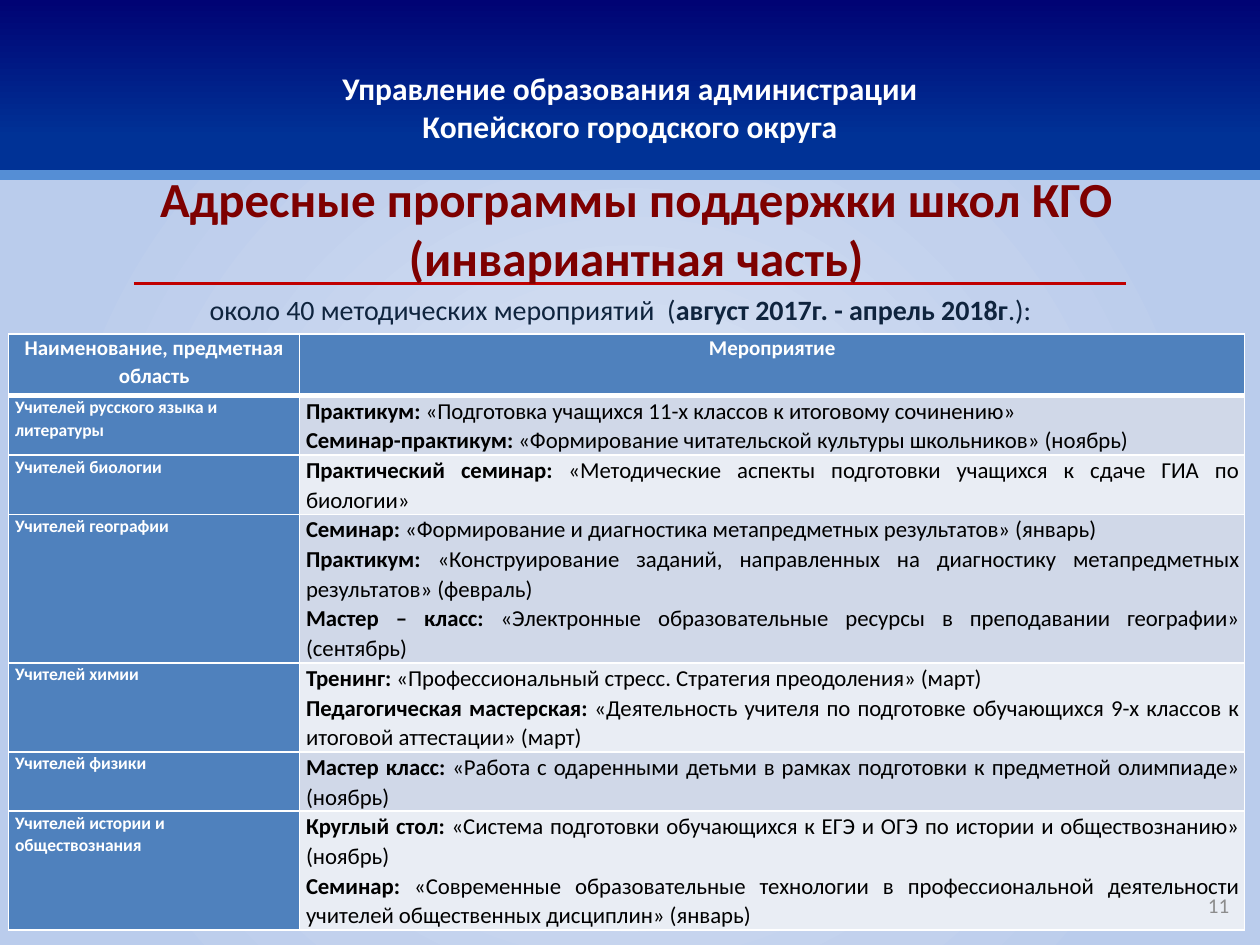
"""Build a slide listing the support programmes for schools by subject area."""
import pptx
import pptx.chart.data
import pptx.dml.color
import pptx.enum.shapes
import pptx.enum.text
import pptx.oxml
import pptx.oxml.ns
import pptx.util

Pt = pptx.util.Pt
ALIGN = pptx.enum.text.PP_ALIGN
ANCHOR = pptx.enum.text.MSO_ANCHOR
RECTANGLE = pptx.enum.shapes.MSO_SHAPE.RECTANGLE
STRAIGHT = pptx.enum.shapes.MSO_CONNECTOR.STRAIGHT
NAMESPACE = pptx.oxml.ns.nsdecls("a")

COLORS = {
    "white": "FFFFFF", "black": "000000", "title": "7E0000", "subtitle": "0F243E",
    "number": "8C8C8C", "edge": "558ED5", "rule": "C00000", "label": "4F81BD",
    "odd": "D0D8E8", "even": "E9EDF4",
}
PANELS = [
    ((0, 0, 720, 100), [(0, "000374"), (79, "003296")], '<a:lin ang="5400000" scaled="0"/>'),
    ((0, 100, 720, 440), [(0, "E1E8F5"), (62, "C2D1ED"), (83, "BACCEC")],
     '<a:path path="circle"><a:fillToRect l="50000" t="50000" r="50000" b="50000"/></a:path>'),
]
RULES = [((0, 100, 720, 100), "edge", 6), ((76.5, 162, 643.5, 162), "rule", 2.25)]
OFFICE = [("Управление образования администрации", True), ("\v", True),
          ("Копейского городского округа", True)]
TITLE = [("Адресные программы поддержки школ КГО (инвариантная часть)", True)]
SUBTITLE = [("около 40 методических мероприятий  (", False),
            ("август 2017г. - апрель 2018г", True), (".):", False)]
PAGE_NUMBER = [("11", False)]
HEADINGS = ["Наименование, предметная область", "Мероприятие"]
COLUMN_WIDTHS = [166.3, 540]
HEADING_HEIGHT = 35.3
PROGRAMMES = [
    ("Учителей русского языка и литературы", 33.5, [
        ("Практикум:", "«Подготовка учащихся 11-х классов к итоговому сочинению»"),
        ("Семинар-практикум:", "«Формирование читательской культуры школьников» (ноябрь)")]),
    ("Учителей биологии", 33.5, [
        ("Практический семинар:",
         "«Методические аспекты подготовки учащихся к сдаче ГИА по биологии»")]),
    ("Учителей географии", 84.5, [
        ("Семинар:", "«Формирование и диагностика метапредметных результатов» (январь)"),
        ("Практикум:", "«Конструирование заданий, направленных на диагностику "
                       "метапредметных результатов» (февраль)"),
        ("Мастер – класс:",
         "«Электронные образовательные ресурсы в преподавании географии» (сентябрь)")]),
    ("Учителей химии", 50.7, [
        ("Тренинг:", "«Профессиональный стресс. Стратегия преодоления» (март)"),
        ("Педагогическая мастерская:", "«Деятельность учителя по подготовке "
                                       "обучающихся 9-х классов к итоговой аттестации» (март)")]),
    ("Учителей физики", 33.5, [
        ("Мастер класс:",
         "«Работа с одаренными детьми в рамках подготовки к предметной олимпиаде» (ноябрь)")]),
    ("Учителей истории и обществознания", 67.5, [
        ("Круглый стол:", "«Система подготовки обучающихся к ЕГЭ и ОГЭ по истории "
                          "и обществознанию» (ноябрь)"),
        ("Семинар:", "«Современные образовательные технологии в профессиональной "
                     "деятельности учителей общественных дисциплин» (январь)")]),
]


def rgb(name):
    return pptx.dml.color.RGBColor.from_string(COLORS[name])


def apply(target, values):
    for name, value in values.items():
        setattr(target, name, value)


def write(paragraph, parts, size, color, alignment, spacing=1.0):
    apply(paragraph, {"alignment": alignment, "line_spacing": spacing, "space_before": Pt(0)})
    for text, bold in parts:
        if text == "\v":
            paragraph.add_line_break()
            continue
        run = paragraph.add_run()
        run.text = text
        apply(run.font, {"name": "Calibri", "size": Pt(size), "bold": bold})
        run.font.color.rgb = rgb(color)


def add_panel(slide, box, stops, direction):
    panel = slide.shapes.add_shape(RECTANGLE, *map(Pt, box))
    panel.shadow.inherit = False
    panel.line.fill.background()
    marks = "".join(f'<a:gs pos="{position * 1000}"><a:srgbClr val="{color}"/></a:gs>'
                    for position, color in stops)
    gradient = pptx.oxml.parse_xml(
        f'<a:gradFill {NAMESPACE} rotWithShape="1"><a:gsLst>{marks}</a:gsLst>{direction}</a:gradFill>')
    panel._element.spPr.find(pptx.oxml.ns.qn("a:prstGeom")).addnext(gradient)
    return panel


def add_rule(slide, ends, color, width):
    rule = slide.shapes.add_connector(STRAIGHT, *map(Pt, ends))
    rule.line.color.rgb = rgb(color)
    rule.line.width = Pt(width)
    rule._element.spPr.append(pptx.oxml.parse_xml(f"<a:effectLst {NAMESPACE}/>"))


def set_frame(shape, box, anchor):
    apply(shape, dict(zip(("left", "top", "width", "height"), map(Pt, box))))
    apply(shape.text_frame, {"word_wrap": True, "vertical_anchor": anchor,
                             "auto_size": pptx.enum.text.MSO_AUTO_SIZE.NONE})
    return shape.text_frame.paragraphs[0]


def add_text(slide, box, anchor):
    return set_frame(slide.shapes.add_textbox(0, 0, 0, 0), box, anchor)


def fill_cell(cell, paragraphs, size, color, alignment, fill, top=1, bottom=1):
    apply(cell, {"margin_left": Pt(3.6), "margin_right": Pt(3.6),
                 "margin_top": 0, "margin_bottom": 0, "vertical_anchor": ANCHOR.TOP})
    properties = cell._tc.get_or_add_tcPr()
    for side, width in (("L", 1), ("R", 1), ("T", top), ("B", bottom)):
        properties.append(pptx.oxml.parse_xml(
            f'<a:ln{side} {NAMESPACE} w="{Pt(width)}"><a:solidFill>'
            f'<a:srgbClr val="{COLORS["white"]}"/></a:solidFill></a:ln{side}>'))
    cell.fill.solid()
    cell.fill.fore_color.rgb = rgb(fill)
    frame = cell.text_frame
    for index, parts in enumerate(paragraphs):
        paragraph = frame.add_paragraph() if index else frame.paragraphs[0]
        write(paragraph, parts, size, color, alignment, 1.07)


def add_programmes(slide):
    heights = [HEADING_HEIGHT] + [height for _, height, _ in PROGRAMMES]
    table = slide.shapes.add_table(len(heights), len(COLUMN_WIDTHS), Pt(5), Pt(190.8),
                                   Pt(sum(COLUMN_WIDTHS)), Pt(sum(heights))).table
    for column, width in zip(table.columns, COLUMN_WIDTHS):
        column.width = Pt(width)
    for row, height in zip(table.rows, heights):
        row.height = Pt(height)
    for index, heading in enumerate(HEADINGS):
        fill_cell(table.cell(0, index), [[(heading, True)]], 12, "white",
                  ALIGN.CENTER, "label", bottom=3)
    for index, (teachers, _, events) in enumerate(PROGRAMMES, 1):
        top = 3 if index == 1 else 1
        fill_cell(table.cell(index, 0), [[(teachers, True)]], 10, "white",
                  ALIGN.LEFT, "label", top)
        paragraphs = [[(kind, True), (" " + topic, False)] for kind, topic in events]
        fill_cell(table.cell(index, 1), paragraphs, 13, "black", ALIGN.JUSTIFY,
                  "odd" if index % 2 else "even", top)


def main():
    presentation = pptx.Presentation()
    apply(presentation, {"slide_width": Pt(720), "slide_height": Pt(540)})
    slide = presentation.slides.add_slide(presentation.slide_layouts[5])

    banner, _ = [add_panel(slide, *panel) for panel in PANELS]
    banner.text_frame.margin_top = Pt(26)
    write(set_frame(banner, PANELS[0][0], ANCHOR.MIDDLE), OFFICE, 18, "white", ALIGN.CENTER)
    for rule in RULES:
        add_rule(slide, *rule)

    title = slide.shapes.title
    slide.shapes._spTree.append(title._element)
    write(set_frame(title, (5, 96, 717, 67.5), ANCHOR.MIDDLE), TITLE, 28, "title", ALIGN.CENTER)
    write(add_text(slide, (3, 163.5, 703, 73.5), ANCHOR.TOP), SUBTITLE, 16, "subtitle", ALIGN.CENTER)
    add_programmes(slide)
    write(add_text(slide, (541.5, 502.5, 168, 29), ANCHOR.MIDDLE), PAGE_NUMBER, 12, "number", ALIGN.RIGHT)
    presentation.save("out.pptx")


if __name__ == "__main__":
    main()
